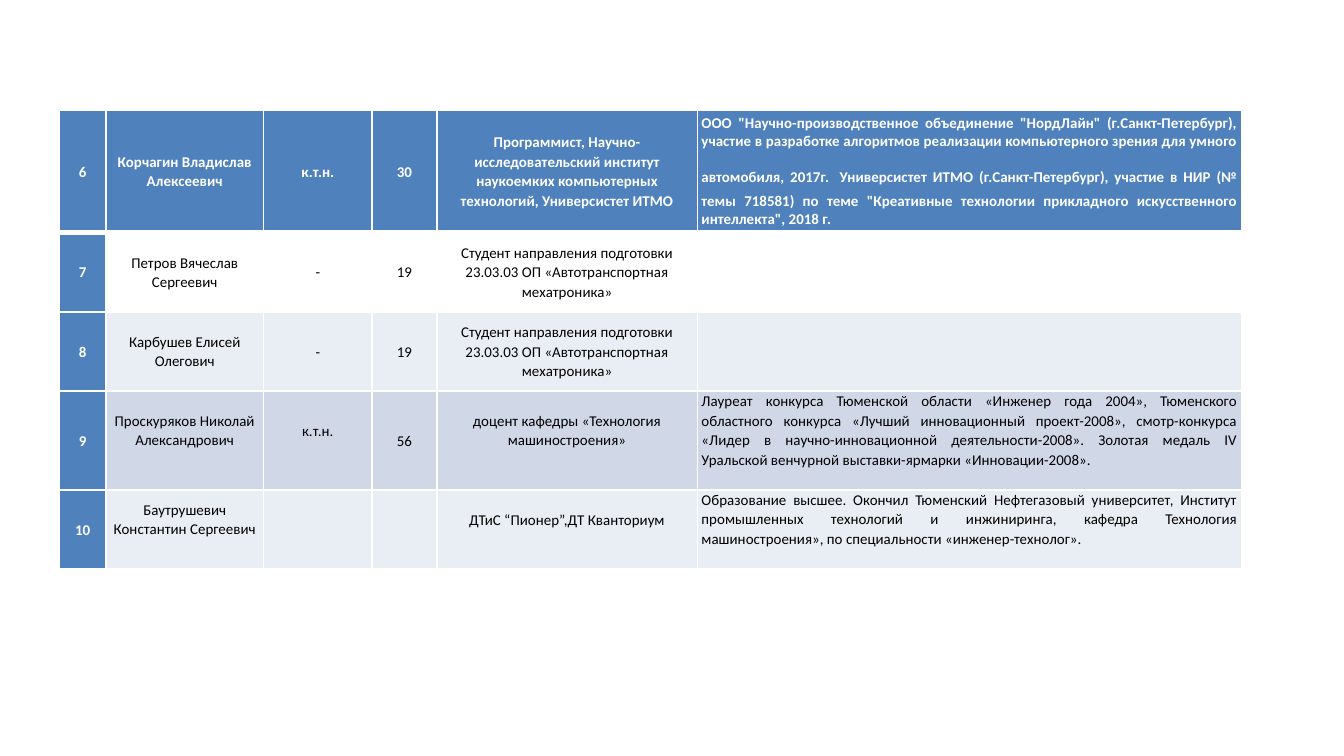
import pptx
import pptx.util
import pptx.dml.color
import pptx.enum.text
import pptx.oxml.ns
from lxml import etree

Inches, Pt = pptx.util.Inches, pptx.util.Pt
RGBColor = pptx.dml.color.RGBColor
ALIGN = pptx.enum.text.PP_ALIGN
ANCHOR = pptx.enum.text.MSO_ANCHOR
qn = pptx.oxml.ns.qn

WHITE = RGBColor(0xFF, 0xFF, 0xFF)
BLACK = RGBColor(0, 0, 0)
BLUE = RGBColor(0x4F, 0x81, 0xBD)
PALE = RGBColor(0xE9, 0xED, 0xF4)
MID = RGBColor(0xD0, 0xD8, 0xE8)

# Content: number, name, degree, age, position, achievements
STUDENT = "Студент направления подготовки 23.03.03 ОП «Автотранспортная мехатроника»"
MEMBERS = [
    ("6", "Корчагин Владислав Алексеевич", "к.т.н.", "30",
     "Программист, Научно-исследовательский институт наукоемких компьютерных "
     "технологий, Универсистет ИТМО",
     ('ООО "Научно-производственное объединение "НордЛайн" (г.Санкт-Петербург), '
      "участие в разработке алгоритмов реализации компьютерного зрения для умного "
      "автомобиля, 2017г.",
      " ",
      "Универсистет ИТМО (г.Санкт-Петербург), участие в НИР (№ темы 718581) по теме "
      '"Креативные технологии прикладного искусственного интеллекта", 2018 г.')),
    ("7", "Петров Вячеслав Сергеевич", "-", "19", STUDENT, ""),
    ("8", "Карбушев Елисей Олегович", "-", "19", STUDENT, ""),
    ("9", "Проскуряков Николай Александрович", "к.т.н.", "56",
     "доцент кафедры «Технология машиностроения»",
     "Лауреат конкурса Тюменской области «Инженер года 2004», Тюменского областного "
     "конкурса «Лучший инновационный проект-2008», смотр-конкурса «Лидер в "
     "научно-инновационной деятельности-2008». Золотая медаль IV Уральской венчурной "
     "выставки-ярмарки «Инновации-2008»."),
    ("10", "Баутрушевич Константин Сергеевич", "", "",
     "ДТиС “Пионер”,ДТ Кванториум",
     "Образование высшее. Окончил Тюменский Нефтегазовый университет, Институт "
     "промышленных технологий и инжиниринга, кафедра Технология машиностроения», "
     "по специальности «инженер-технолог»."),
]
COL_WIDTHS = [0.35, 1.17, 0.81, 0.48, 1.94, 4.05]
ROW_HEIGHTS = [0.91, 0.59, 0.59, 0.59, 0.59]
ROW_FILLS = [BLUE, None, PALE, MID, PALE]
AGE_COL, LAST_COL = 3, 5
RAISED_ROWS = (3, 4)    # text sits one line above the middle
SPACER_SIZE = 18


def set_borders(cell, widths):
    """Add white borders; they must stand before the cell's fill."""
    tcPr = cell._tc.get_or_add_tcPr()
    for i, (side, width) in enumerate(widths.items()):
        ln = etree.Element(qn("a:" + side), w=str(Pt(width)))
        fill = etree.SubElement(ln, qn("a:solidFill"))
        etree.SubElement(fill, qn("a:srgbClr"), val=str(WHITE))
        tcPr.insert(i, ln)


def fill_cell(cell, row, col, content):
    strong = row == 0 or col == 0
    raised = row in RAISED_ROWS and col not in (0, AGE_COL)
    top = row > 0 and col == LAST_COL
    side = Inches(0.03 if col == LAST_COL else 0.04)
    layout = {"margin_left": side, "margin_right": side,
              "margin_top": 0, "margin_bottom": Inches(0.15 if raised else 0),
              "vertical_anchor": ANCHOR.TOP if top else ANCHOR.MIDDLE}
    for name, value in layout.items():
        setattr(cell, name, value)

    color = BLUE if col == 0 else ROW_FILLS[row]
    if color is None:
        cell.fill.background()
    else:
        cell.fill.solid()
        cell.fill.fore_color.rgb = color
    set_borders(cell, {"lnL": 1, "lnR": 1, "lnT": 3 if row == 1 else 1,
                       "lnB": 3 if row == 0 else 1})

    if not content:
        return
    p = cell.text_frame.paragraphs[0]
    p.alignment = ALIGN.JUSTIFY if col == LAST_COL else ALIGN.CENTER
    p.line_spacing = 1.0 if row == 0 and col == LAST_COL else 1.07
    for text in (content if isinstance(content, tuple) else (content,)):
        r = p.add_run()
        r.text = text
        font = {"name": "Calibri", "bold": strong,
                "size": Pt(SPACER_SIZE if text == " " else 8)}
        for name, value in font.items():
            setattr(r.font, name, value)
        r.font.color.rgb = WHITE if strong else BLACK


# Slide, 16:9
prs = pptx.Presentation()
prs.slide_width = Inches(10)
prs.slide_height = prs.slide_width * 9 // 16
s = prs.slides.add_slide(prs.slide_layouts[6])

# Team table
table = s.shapes.add_table(
    len(MEMBERS), len(COL_WIDTHS), Inches(0.44), Inches(0.82),
    Inches(sum(COL_WIDTHS)), Inches(sum(ROW_HEIGHTS))).table
table.first_row = table.horz_banding = False
for column, width in zip(table.columns, COL_WIDTHS):
    column.width = Inches(width)
for row, (member, height) in enumerate(zip(MEMBERS, ROW_HEIGHTS)):
    table.rows[row].height = Inches(height)
    for col, content in enumerate(member):
        fill_cell(table.cell(row, col), row, col, content)

prs.save("out.pptx")
